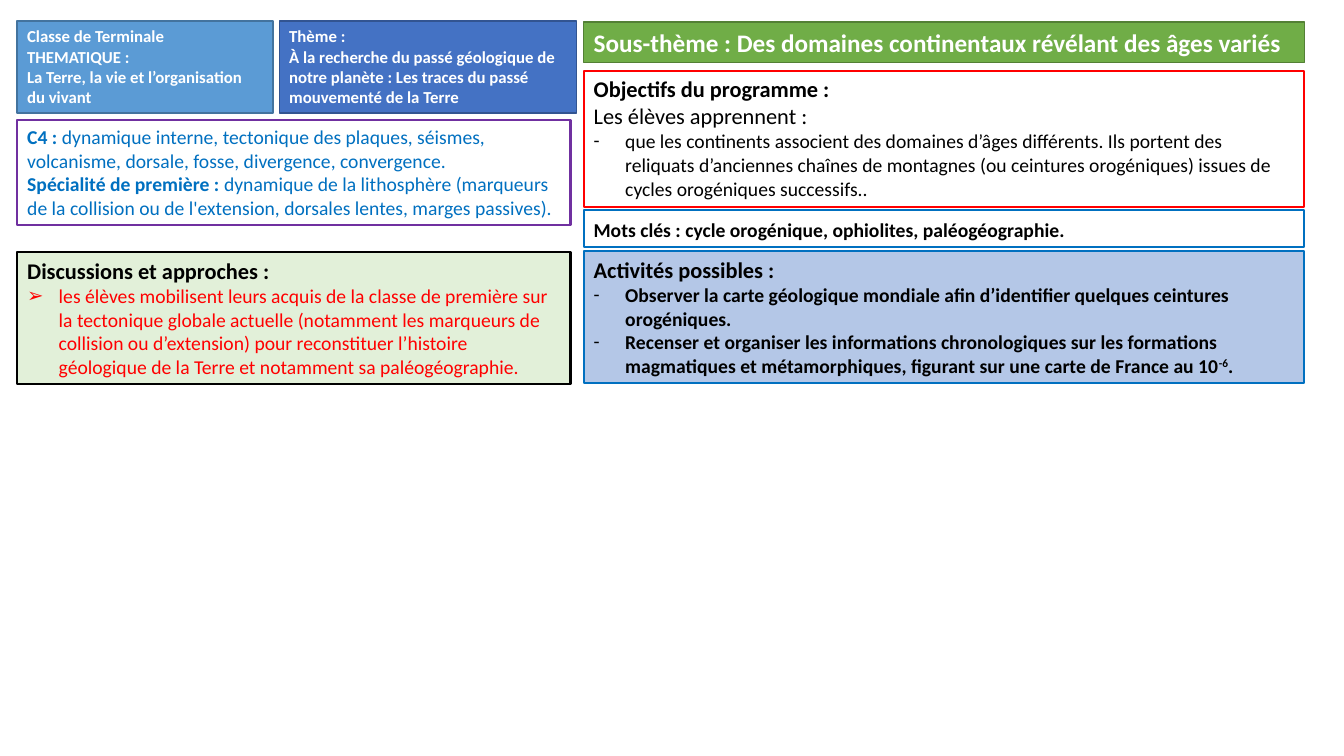
from lxml import etree
from pptx import Presentation
from pptx import util as u
from pptx.dml import color
from pptx.enum import shapes, text
from pptx.oxml import ns

COLOURS = {
    "white": "FFFFFF", "black": "000000", "red": "FF0000", "purple": "7030A0",
    "blue": "0070C0", "sky": "5B9BD5", "sky edge": "43739E",
    "royal": "4472C4", "royal edge": "325491",
    "green": "70AD47", "green edge": "538035",
    "pale green": "E2F0D9", "pale blue": "B4C7E7",
}
LEFT, RIGHT = 12.24, 416.88
LEFT_WIDTH, RIGHT_WIDTH = 395.28, 514.8
INDENT = 22.5


def rgb(name):
    return color.RGBColor.from_string(COLOURS[name])


def style_box(box, place, fill, line, weight, paragraphs):
    box.left, box.top, box.width, box.height = [u.Pt(value) for value in place]
    if fill:
        box.fill.solid()
        box.fill.fore_color.rgb = rgb(fill)
    else:
        box.fill.background()
    box.line.color.rgb = rgb(line)
    box.line.width = u.Pt(weight)
    frame = box.text_frame
    frame.word_wrap = True
    frame.auto_size = text.MSO_AUTO_SIZE.NONE
    frame.vertical_anchor = text.MSO_ANCHOR.TOP
    frame.text = "\n".join("".join(span[0] for span in spans) for _, spans in paragraphs)
    for para, (bullet, spans) in zip(frame.paragraphs, paragraphs):
        para.alignment = text.PP_ALIGN.LEFT
        para.line_spacing = 1.0
        para.space_before = para.space_after = u.Pt(0)
        props = para._p.get_or_add_pPr()
        props.set("marL", str(u.Pt(INDENT if bullet else 0)))
        props.set("indent", str(u.Pt(-INDENT if bullet else 0)))
        if bullet:
            etree.SubElement(props, ns.qn("a:buFont")).set("typeface", "Calibri")
            etree.SubElement(props, ns.qn("a:buChar")).set("char", bullet)
        else:
            etree.SubElement(props, ns.qn("a:buNone"))
        para.runs[0].text = spans[0][0]
        for wording, *_ in spans[1:]:
            para.add_run().text = wording
        for span, (_, size, colour, bold) in zip(para.runs, spans):
            span.font.name = "Calibri"
            span.font.size = u.Pt(size)
            span.font.bold = bold
            span.font.color.rgb = rgb(colour)


deck = Presentation()
deck.slide_width, deck.slide_height = u.Pt(960), u.Pt(540)
page = deck.slides.add_slide(deck.slide_layouts.get_by_name("Comparison"))
title, prior, discussion, goals, activities = page.placeholders

style_box(title, (RIGHT, 15.84, RIGHT_WIDTH, 28.8), "green", "green edge", 1, [
    (None, [("Sous-thème : Des domaines continentaux révélant des âges variés", 18, "white", True)]),
])
style_box(prior, (LEFT, 85.68, LEFT_WIDTH, 74.88), None, "purple", 1.5, [
    (None, [("C4 : ", 14, "blue", True),
            ("dynamique interne, tectonique des plaques, séismes, volcanisme, dorsale, fosse, "
             "divergence, convergence.", 14, "blue", False)]),
    (None, [("Spécialité de première : ", 14, "blue", True),
            ("dynamique de la lithosphère (marqueurs de la collision ou de l'extension, "
             "dorsales lentes, marges passives).", 14, "blue", False)]),
])
style_box(discussion, (LEFT, 180, LEFT_WIDTH, 94.32), "pale green", "black", 1.5, [
    (None, [("Discussions et approches :", 16, "black", True)]),
    ("➢", [("les élèves mobilisent leurs acquis de la classe de première sur la tectonique globale "
            "actuelle (notamment les marqueurs de collision ou d’extension) pour reconstituer "
            "l’histoire géologique de la Terre et notamment sa paléogéographie.", 14, "red", False)]),
])
style_box(goals, (RIGHT, 50.4, RIGHT_WIDTH, 97.2), None, "red", 1.5, [
    (None, [("Objectifs du programme :", 16, "black", True)]),
    (None, [("Les élèves apprennent :", 16, "black", False)]),
    ("-", [("que les continents associent des domaines d’âges différents. Ils portent des reliquats "
            "d’anciennes chaînes de montagnes (ou ceintures orogéniques) issues de cycles "
            "orogéniques successifs..", 14, "black", False)]),
])
for para in goals.text_frame.paragraphs[:2]:
    para.alignment = text.PP_ALIGN.JUSTIFY
style_box(activities, (RIGHT, 179.28, RIGHT_WIDTH, 94.32), "pale blue", "blue", 1.5, [
    (None, [("Activités possibles :", 16, "black", True)]),
    ("-", [("Observer la carte géologique mondiale afin d’identifier quelques ceintures "
            "orogéniques.", 14, "black", True)]),
    ("-", [("Recenser et organiser les informations chronologiques sur les formations magmatiques "
            "et métamorphiques, figurant sur une carte de France au 10", 14, "black", True),
           ("-6", 14, "black", True),
           (".", 14, "black", True)]),
])
exponent = activities.text_frame.paragraphs[2].runs[1]
exponent._r.get_or_add_rPr().set("baseline", "30000")

plain_boxes = [
    ((LEFT, 15.12, 182.88, 65.52), "sky", "sky edge", 1, 12, "white",
     ["Classe de Terminale", "THEMATIQUE :", "La Terre, la vie et l’organisation du vivant"]),
    ((199.44, 15.12, 212.4, 65.52), "royal", "royal edge", 1, 12, "white",
     ["Thème :", "À la recherche du passé géologique de notre planète : "
      "Les traces du passé mouvementé de la Terre"]),
    ((RIGHT, 149.76, RIGHT_WIDTH, 26.64), None, "blue", 1.5, 14, "black",
     ["Mots clés : cycle orogénique, ophiolites, paléogéographie."]),
]
for place, fill, line, weight, size, colour, wordings in plain_boxes:
    box = page.shapes.add_shape(shapes.MSO_SHAPE.RECTANGLE, 0, 0, 0, 0)
    box.shadow.inherit = False
    style_box(box, place, fill, line, weight,
              [(None, [(wording, size, colour, True)]) for wording in wordings])
keywords = box.text_frame.paragraphs[0]
keywords.line_spacing = 1.15
keywords.space_after = u.Pt(10)

deck.save("out.pptx")
